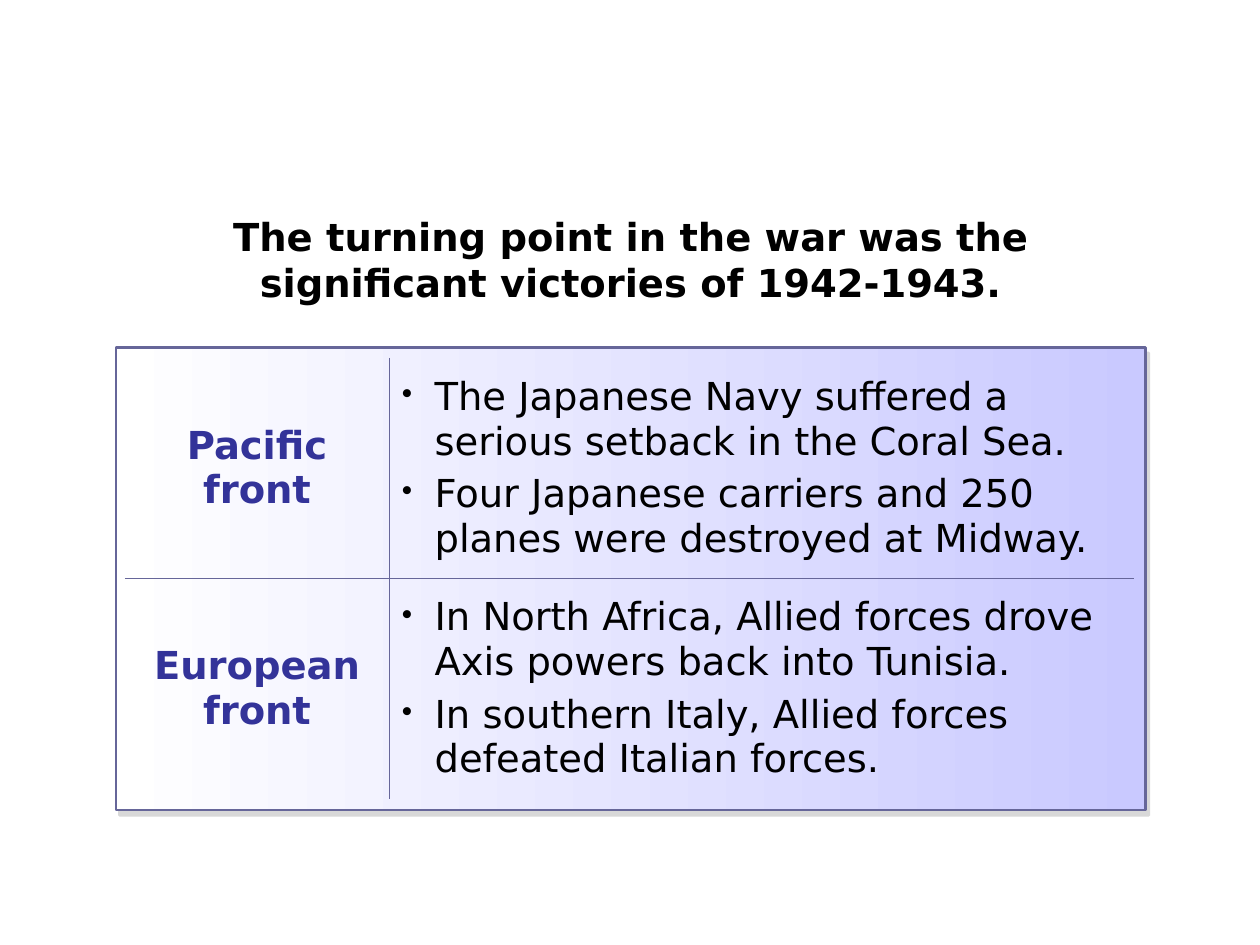
"""Build a slide on the turning point of the war, with a table of two fronts."""
from lxml.etree import SubElement
from pptx import Presentation
from pptx.dml.color import RGBColor
from pptx.enum.shapes import MSO_SHAPE
from pptx.enum.text import MSO_ANCHOR, MSO_AUTO_SIZE, PP_ALIGN
from pptx.oxml import parse_xml
from pptx.oxml.ns import nsdecls, qn
from pptx.util import Pt

BLACK = RGBColor(0x00, 0x00, 0x00)
WHITE = RGBColor(0xFF, 0xFF, 0xFF)
LAVENDER = RGBColor(0xC9, 0xC9, 0xFF)
SLATE = RGBColor(0x66, 0x66, 0x99)
INDIGO = RGBColor(0x33, 0x33, 0x99)
SHADOW = RGBColor(0xB2, 0xB2, 0xB2)
FONT = "DejaVu Sans"
LEFT, WIDTH = Pt(66.24), Pt(588.24)
FRONTS = [
    ("Pacific front", [
        "The Japanese Navy suffered a serious setback in the Coral Sea.",
        "Four Japanese carriers and 250 planes were destroyed at Midway.",
    ]),
    ("European front", [
        "In North Africa, Allied forces drove Axis powers back into Tunisia.",
        "In southern Italy, Allied forces defeated Italian forces.",
    ]),
]


def add_text(paragraph, text, color, bold):
    run = paragraph.add_run()
    run.text = text
    run.font.name = FONT
    run.font.size = Pt(22)
    run.font.bold = bold
    run.font.color.rgb = color


def set_borders(cell, visible):
    properties = cell._tc.get_or_add_tcPr()
    for index, side in enumerate(("lnL", "lnR", "lnT", "lnB")):
        paint = "<a:noFill/>"
        if side in visible:
            paint = f'<a:solidFill><a:srgbClr val="{SLATE}"/></a:solidFill>'
        border = parse_xml(f'<a:{side} {nsdecls("a")} w="{Pt(1)}">{paint}</a:{side}>')
        properties.insert(index, border)


presentation = Presentation()
presentation.slide_width = Pt(720)
presentation.slide_height = Pt(540)
slide = presentation.slides.add_slide(presentation.slide_layouts[5])

panel = slide.shapes.add_shape(MSO_SHAPE.RECTANGLE, LEFT, Pt(198.72), WIDTH, Pt(264.24))
panel.fill.gradient()
panel.fill.gradient_angle = 0
for stop, color, position in zip(panel.fill.gradient_stops, (WHITE, LAVENDER), (0, 1)):
    stop.color.rgb = color
    stop.position = position
panel.line.color.rgb = SLATE
panel.line.width = Pt(1.5)
panel.shadow.inherit = False
effects = panel._element.spPr.find(qn("a:effectLst"))
effects.append(parse_xml(
    f'<a:outerShdw {nsdecls("a")} blurRad="0" dist="{Pt(3.6)}" dir="{56 * 60000}" '
    f'algn="ctr" rotWithShape="0"><a:srgbClr val="{SHADOW}">'
    '<a:alpha val="50000"/></a:srgbClr></a:outerShdw>'
))

table = slide.shapes.add_table(2, 2, Pt(71.28), Pt(204.48), Pt(576.72), Pt(252)).table
table.first_row = False
table.horz_banding = False
table.columns[0].width = Pt(151.2)
table.columns[1].width = Pt(425.52)
for row, (front, events) in enumerate(FRONTS):
    table.rows[row].height = Pt(126)
    inner_edge = "lnT" if row else "lnB"
    for column, inner_side in enumerate(("lnR", "lnL")):
        cell = table.cell(row, column)
        cell.vertical_anchor = MSO_ANCHOR.MIDDLE
        cell.fill.background()
        set_borders(cell, (inner_side, inner_edge))

    paragraph = table.cell(row, 0).text_frame.paragraphs[0]
    paragraph.alignment = PP_ALIGN.CENTER
    add_text(paragraph, front, INDIGO, True)

    text_frame = table.cell(row, 1).text_frame
    for index, event in enumerate(events):
        paragraph = text_frame.add_paragraph() if index else text_frame.paragraphs[0]
        paragraph.space_before = Pt(4.4 if index else 0)
        properties = paragraph._p.get_or_add_pPr()
        properties.set("marL", str(Pt(18.72)))
        properties.set("indent", str(-Pt(18.72)))
        SubElement(properties, qn("a:buSzPct"), val="80000")
        SubElement(properties, qn("a:buChar"), char="•")
        add_text(paragraph, event, BLACK, False)

title = slide.shapes.title
title.left, title.top, title.width, title.height = LEFT, Pt(118.08), WIDTH, Pt(59.76)
title.text_frame.word_wrap = True
title.text_frame.auto_size = MSO_AUTO_SIZE.NONE
title.text_frame.vertical_anchor = MSO_ANCHOR.TOP
paragraph = title.text_frame.paragraphs[0]
paragraph.alignment = PP_ALIGN.CENTER
add_text(paragraph, "The turning point in the war was the significant victories of 1942-1943.", BLACK, True)

presentation.save("out.pptx")
